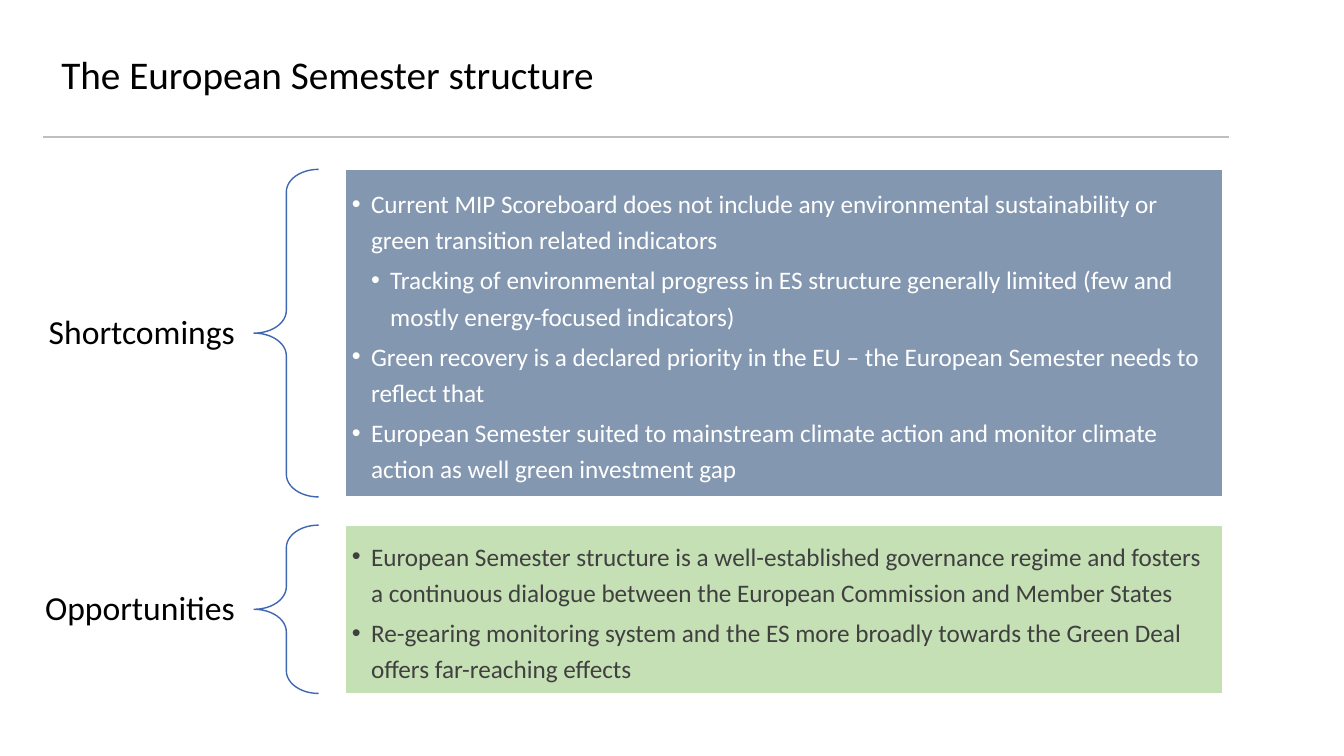
from lxml import etree
from pptx import Presentation
from pptx.dml.color import RGBColor
from pptx.enum import shapes, text
from pptx.oxml import ns
from pptx.util import Inches, Pt

BLACK = RGBColor(0x00, 0x00, 0x00)
WHITE = RGBColor(0xFF, 0xFF, 0xFF)
DARK_GREY = RGBColor(0x40, 0x40, 0x40)
RULE_GREY = RGBColor(0xBF, 0xBF, 0xBF)
BRACE_BLUE = RGBColor(0x3E, 0x67, 0xB2)
SLATE = RGBColor(0x84, 0x97, 0xB0)
GREEN = RGBColor(0xC5, 0xE0, 0xB4)

INDENT = 0.19

# Each section: label, top, height, panel fill, text colour, (level, bullet)
SECTIONS = [
    ("Shortcomings", 1.68, 3.25, SLATE, WHITE, [
        (1, "Current MIP Scoreboard does not include any environmental "
            "sustainability or green transition related indicators"),
        (2, "Tracking of environmental progress in ES structure generally "
            "limited (few and mostly energy-focused indicators)"),
        (1, "Green recovery is a declared priority in the EU – the European "
            "Semester needs to reflect that"),
        (1, "European Semester suited to mainstream climate action and monitor "
            "climate action as well green investment gap"),
    ]),
    ("Opportunities", 5.21, 1.67, GREEN, DARK_GREY, [
        (1, "European Semester structure is a well-established governance regime "
            "and fosters a continuous dialogue between the European Commission "
            "and Member States"),
        (1, "Re-gearing monitoring system and the ES more broadly towards the "
            "Green Deal offers far-reaching effects"),
    ]),
]


def set_frame(tf, side, edge):
    tf.word_wrap = True
    tf.vertical_anchor = text.MSO_ANCHOR.MIDDLE
    tf.margin_left = tf.margin_right = Inches(side)
    tf.margin_top = tf.margin_bottom = Inches(edge)


def style(p, size, color, spacing, after=0):
    p.line_spacing = spacing
    p.space_after = Pt(after)
    for r in p.runs:
        r.font.name = "Calibri"
        r.font.size = Pt(size)
        r.font.color.rgb = color


prs = Presentation()
prs.slide_width = Inches(13.33)
prs.slide_height = Inches(7.5)
s = prs.slides.add_slide(prs.slide_layouts[6])

# Title
title = s.shapes.add_textbox(Inches(0.51), Inches(0.21), Inches(10.43), Inches(1.1))
set_frame(title.text_frame, 0.1, 0.05)
title.text_frame.text = "The European Semester structure"
style(title.text_frame.paragraphs[0], 28, BLACK, 0.9)

# Rule under the title
rule = s.shapes.add_connector(shapes.MSO_CONNECTOR.STRAIGHT, Inches(0.43),
                              Inches(1.36), Inches(12.19), Inches(1.36))
rule.line.color.rgb = RULE_GREY
rule.line.width = Pt(1)
etree.SubElement(rule._element.spPr, ns.qn("a:effectLst"))

for label_text, top, height, fill, color, bullets in SECTIONS:
    # Label, centred on its panel
    label = s.shapes.add_textbox(Inches(0.2), Inches(top + height / 2 - 0.7),
                                 Inches(2.32), Inches(1.4))
    set_frame(label.text_frame, 0.19, 0.07)
    label.text_frame.text = label_text
    p = label.text_frame.paragraphs[0]
    p.alignment = text.PP_ALIGN.RIGHT
    style(p, 24, BLACK, 0.9, 8.4)

    # Brace
    brace = s.shapes.add_shape(shapes.MSO_SHAPE.LEFT_BRACE, Inches(2.52),
                               Inches(top), Inches(0.64), Inches(height))
    brace.adjustments[0] = 0.35
    brace.adjustments[1] = 0.5
    brace.shadow.inherit = False
    brace.fill.background()
    brace.line.color.rgb = BRACE_BLUE
    brace.line.width = Pt(1)

    # Panel with bullets
    panel = s.shapes.add_shape(shapes.MSO_SHAPE.RECTANGLE, Inches(3.42),
                               Inches(top), Inches(8.71), Inches(height))
    panel.shadow.inherit = False
    panel.fill.solid()
    panel.fill.fore_color.rgb = fill
    panel.line.color.rgb = WHITE
    panel.line.width = Pt(1)
    tf = panel.text_frame
    set_frame(tf, 0.07, 0.07)
    tf.text = "\n".join(bullet for _, bullet in bullets)
    for p, (level, _) in zip(tf.paragraphs, bullets):
        p.alignment = text.PP_ALIGN.LEFT
        p.level = level
        pPr = p._p.get_or_add_pPr()
        pPr.set("marL", str(Inches(INDENT * level)))
        pPr.set("indent", str(-Inches(INDENT)))
        etree.SubElement(pPr, ns.qn("a:buFont")).set("typeface", "Arial")
        etree.SubElement(pPr, ns.qn("a:buChar")).set("char", "•")
        style(p, 18, color, 1.2, 2.7)

prs.save("out.pptx")
